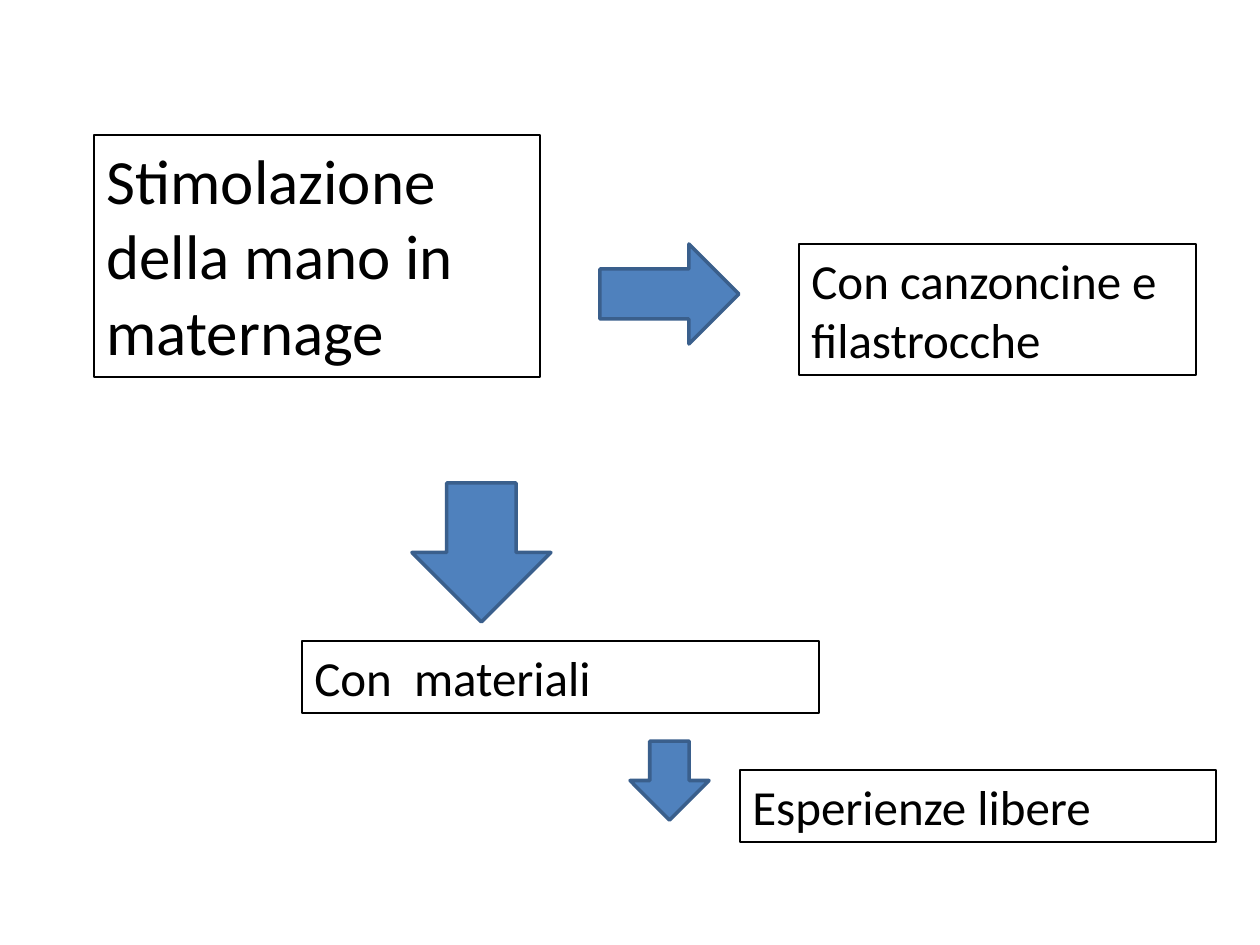
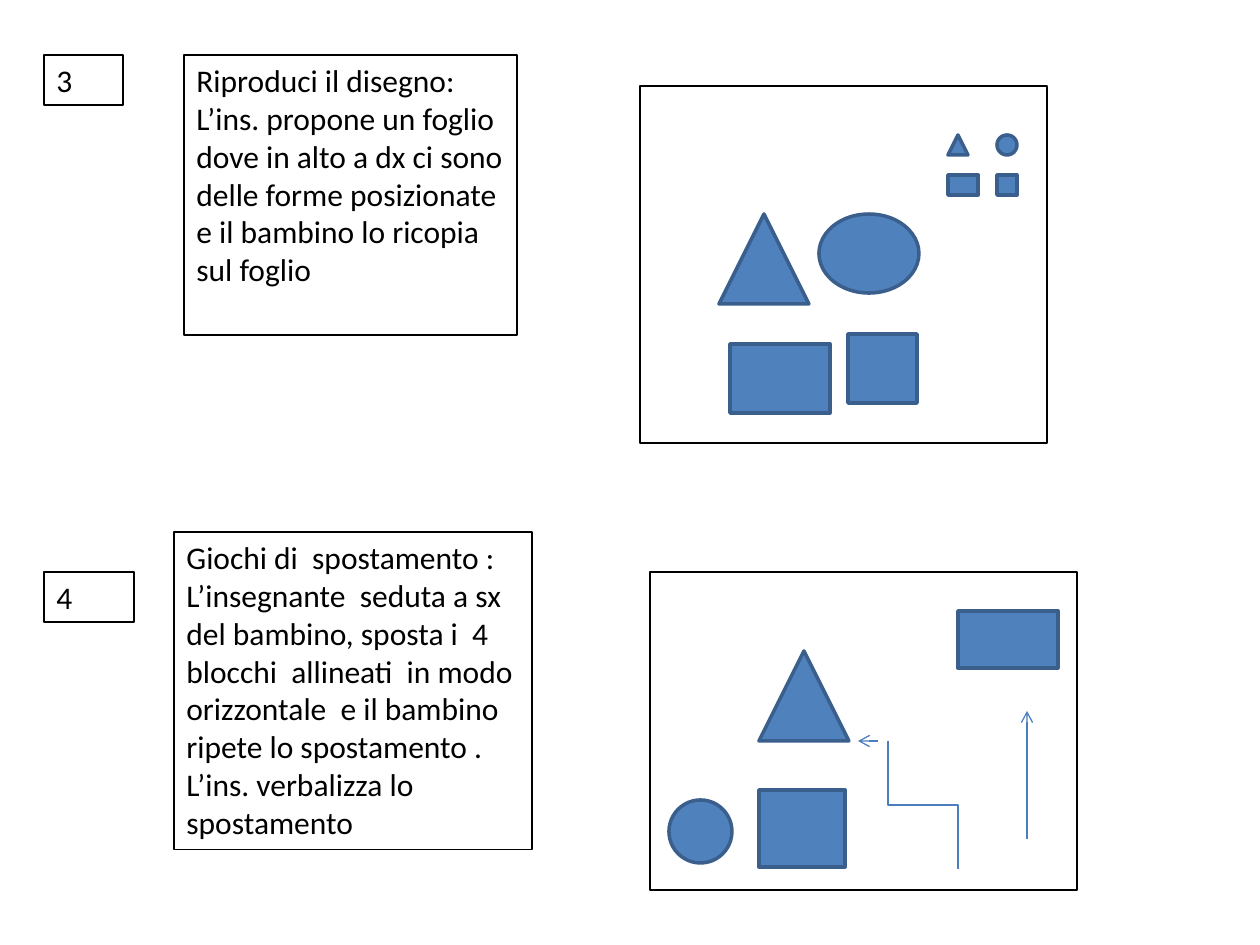
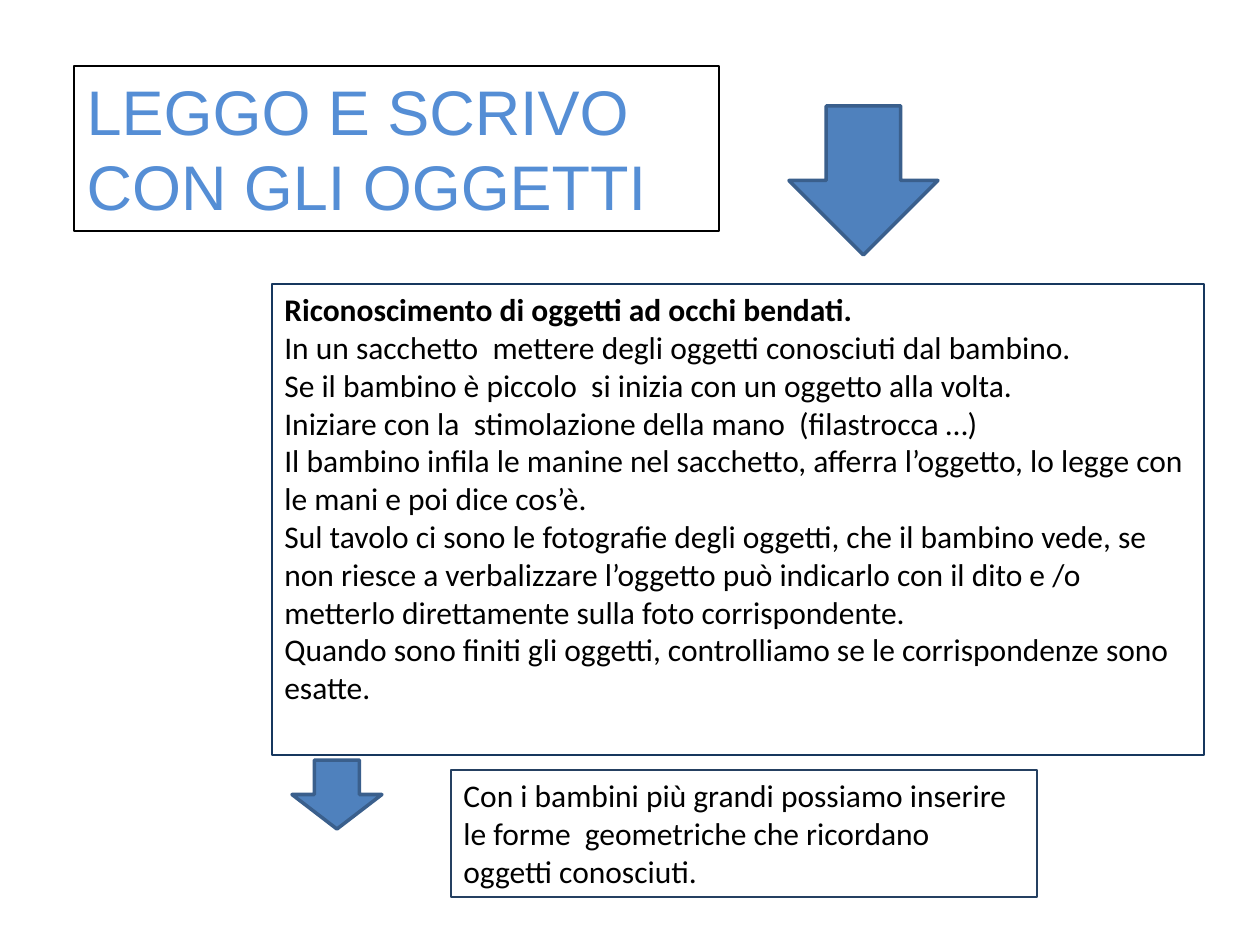
from lxml import etree
from pptx import Presentation
from pptx import util as u
from pptx.dml.color import RGBColor
from pptx.enum import shapes, text
from pptx.oxml.ns import qn

PX = 914400 / 126  # EMU per px
BLACK = RGBColor(0x00, 0x00, 0x00)
WHITE = RGBColor(0xFF, 0xFF, 0xFF)
BLUE = RGBColor(0x4F, 0x81, 0xBD)
BLUE_EDGE = RGBColor(0x3A, 0x5F, 0x8C)
ARROW_BLUE = RGBColor(0x4B, 0x7E, 0xBC)
TITLE_BLUE = RGBColor(0x55, 0x8E, 0xD5)
NAVY = RGBColor(0x17, 0x37, 0x5E)
DARK_BLUE = RGBColor(0x25, 0x40, 0x61)

KIND = shapes.MSO_SHAPE
RECT, OVAL = KIND.RECTANGLE, KIND.FLOWCHART_CONNECTOR
TRIANGLE = KIND.ISOSCELES_TRIANGLE
DOWN, RIGHT = KIND.DOWN_ARROW, KIND.RIGHT_ARROW


def add_block(s, kind, box, fill=BLUE, line=BLUE_EDGE, width=2):
    sp = s.shapes.add_shape(kind, *[round(n * PX) for n in box])
    sp.shadow.inherit = False
    if fill is None:
        sp.fill.background()
    else:
        sp.fill.solid()
        sp.fill.fore_color.rgb = fill
    sp.line.color.rgb = line
    sp.line.width = u.Pt(width)


def write_box(sp, box, lines, size, line=BLACK, fill=WHITE, font="Calibri", color=BLACK):
    sp.left, sp.top, sp.width, sp.height = [round(n * PX) for n in box]
    if fill is not None:
        sp.fill.solid()
        sp.fill.fore_color.rgb = fill
    sp.line.color.rgb = line
    sp.line.width = u.Pt(0.75)
    tf = sp.text_frame
    tf.text = "\n".join(lines)
    tf.word_wrap = True
    tf.auto_size = text.MSO_AUTO_SIZE.SHAPE_TO_FIT_TEXT
    tf.vertical_anchor = text.MSO_ANCHOR.TOP
    for p in tf.paragraphs:
        p.alignment = text.PP_ALIGN.LEFT
        for r in p.runs:
            r.font.size = u.Pt(size)
            r.font.name = font
            r.font.color.rgb = color


prs = Presentation()
prs.slide_width, prs.slide_height = u.Inches(10), u.Inches(7.5)
title_only, blank = prs.slide_layouts[5], prs.slide_layouts[6]

# Slide 1: hand stimulation
s = prs.slides.add_slide(title_only)
write_box(s.shapes.title, (94, 135, 446, 242), ["Stimolazione della mano in maternage"], 36)
for kind, box in [
    (RIGHT, (600, 244, 139, 100)),
    (DOWN, (412, 483, 139, 139)),
    (DOWN, (630, 741, 79, 79)),
]:
    add_block(s, kind, box)
for box, label in [
    ((799, 244, 397, 131), "Con canzoncine e filastrocche"),
    ((302, 641, 517, 72), "Con  materiali"),
    ((740, 770, 476, 72), "Esperienze libere"),
]:
    write_box(s.shapes.add_textbox(0, 0, 0, 0), box, [label], 28)

# Slide 2: numbered games
s = prs.slides.add_slide(blank)
for box, lines in [
    ((44, 55, 79, 50), ["3"]),
    ((184, 55, 333, 280), [
        "Riproduci il disegno:",
        "L’ins. propone un foglio dove in alto a dx ci sono delle forme posizionate "
        "e il bambino lo ricopia sul foglio"]),
    ((44, 572, 90, 50), ["4"]),
    ((174, 532, 358, 318), [
        "Giochi di  spostamento :",
        "L’insegnante  seduta a sx del bambino, sposta i  4 blocchi  allineati  in modo "
        "orizzontale  e il bambino ripete lo spostamento . L’ins. verbalizza lo spostamento"]),
]:
    write_box(s.shapes.add_textbox(0, 0, 0, 0), box, lines, 18, fill=None)

# Sheets of paper, then the shapes lying on them
for sheet in [(640, 86, 407, 357), (650, 572, 427, 318)]:
    add_block(s, RECT, sheet, None, BLACK, 0.75)
for kind, box in [
    # Game 3: the child's drawing
    (TRIANGLE, (719, 214, 90, 90)),
    (OVAL, (819, 214, 100, 79)),
    (RECT, (730, 344, 100, 69)),
    (RECT, (848, 334, 69, 69)),
    # Game 3: the small model
    (TRIANGLE, (948, 135, 20, 20)),
    (OVAL, (997, 135, 20, 20)),
    (RECT, (948, 175, 30, 20)),
    (RECT, (997, 175, 20, 20)),
    # Game 4: the blocks
    (OVAL, (669, 800, 63, 63)),
    (RECT, (759, 790, 86, 77)),
    (TRIANGLE, (759, 651, 90, 90)),
    (RECT, (958, 611, 100, 57)),
]:
    add_block(s, kind, box)

# Paths of the moved blocks; the elbow is turned to leave vertically
STRAIGHT, ELBOW = shapes.MSO_CONNECTOR.STRAIGHT, shapes.MSO_CONNECTOR.ELBOW
for kind, ends in [
    (STRAIGHT, (1027, 839, 1027, 711)),
    (ELBOW, (987, 770, 859, 840)),
    (STRAIGHT, (878, 741, 858, 741)),
]:
    cxn = s.shapes.add_connector(kind, *[round(n * PX) for n in ends])
    cxn.line.color.rgb = ARROW_BLUE
    cxn.line.width = u.Pt(0.75)
    sp_pr = cxn._element.spPr
    etree.SubElement(sp_pr, qn("a:effectLst"))
    if kind == ELBOW:
        sp_pr.find(qn("a:xfrm")).set("rot", str(270 * 60000))
    else:
        etree.SubElement(sp_pr.find(qn("a:ln")), qn("a:tailEnd"), type="arrow")

# Slide 3: reading and writing with objects
s = prs.slides.add_slide(title_only)
write_box(s.shapes.title, (74, 66, 645, 165), ["LEGGO E SCRIVO CON GLI OGGETTI"], 36,
          font="Arial", color=TITLE_BLUE)
for box in [(789, 106, 149, 149), (292, 760, 90, 69)]:
    add_block(s, DOWN, box)
activity = s.shapes.add_textbox(0, 0, 0, 0)
write_box(activity, (272, 284, 932, 471), [
    "Riconoscimento di oggetti ad occhi bendati.",
    "In un sacchetto  mettere degli oggetti conosciuti dal bambino.",
    "Se il bambino è piccolo  si inizia con un oggetto alla volta.",
    "Iniziare con la  stimolazione della mano  (filastrocca …)",
    "Il bambino infila le manine nel sacchetto, afferra l’oggetto, lo legge con le mani "
    "e poi dice cos’è.",
    "Sul tavolo ci sono le fotografie degli oggetti, che il bambino vede, se non riesce a "
    "verbalizzare l’oggetto può indicarlo con il dito e /o metterlo direttamente sulla foto "
    "corrispondente.",
    "Quando sono finiti gli oggetti, controlliamo se le corrispondenze sono esatte.",
], 18, NAVY)
# Keep the frame taller than its text
activity.text_frame.auto_size = text.MSO_AUTO_SIZE.NONE
activity.text_frame.paragraphs[0].runs[0].font.bold = True
write_box(s.shapes.add_textbox(0, 0, 0, 0), (451, 770, 586, 127), [
    "Con i bambini più grandi possiamo inserire le forme  geometriche che ricordano "
    "oggetti conosciuti."], 18, DARK_BLUE)

prs.save("out.pptx")
